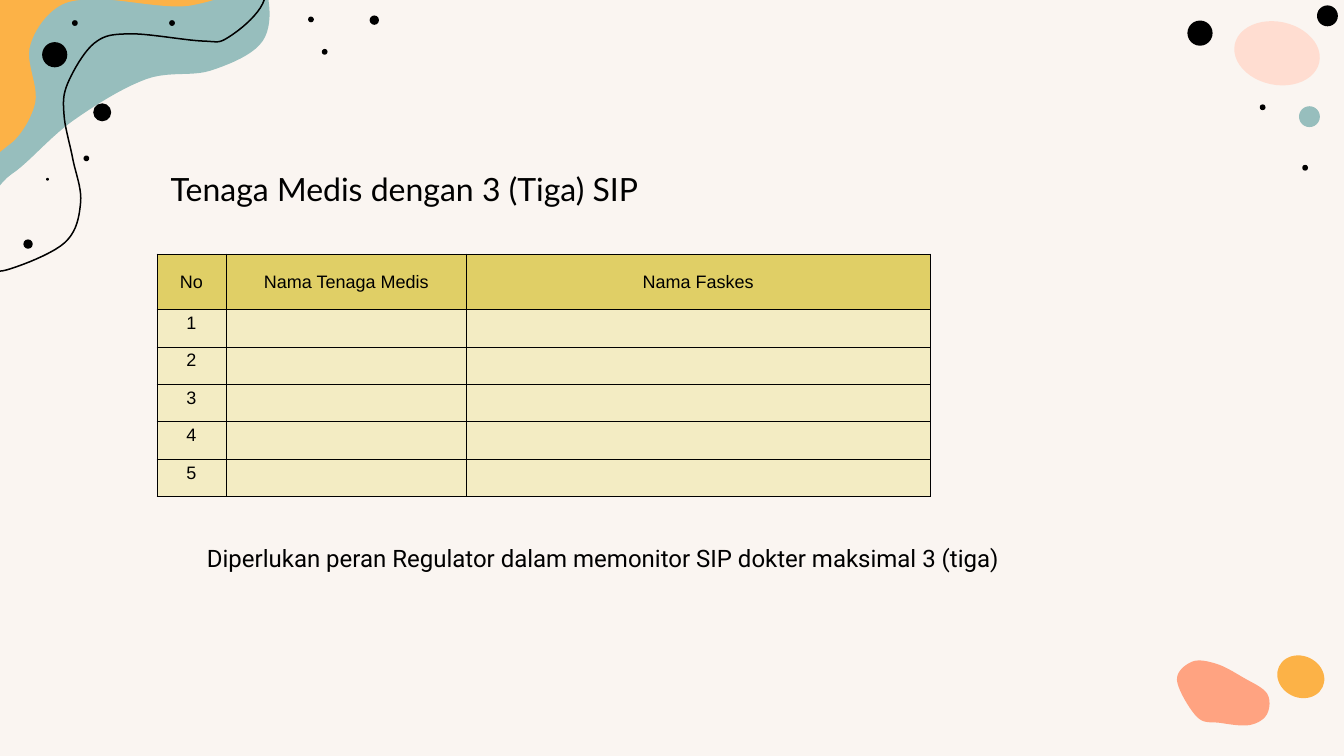
from dataclasses import dataclass

import lxml.etree
import pptx
import pptx.dml.color
import pptx.enum.shapes
import pptx.enum.text
import pptx.oxml.ns
import pptx.util

Inches = pptx.util.Inches
ALIGN = pptx.enum.text.PP_ALIGN
ANCHOR = pptx.enum.text.MSO_ANCHOR
COLORS = {
    "cream": "FAF5F1", "black": "000000", "teal": "97BEBD", "orange": "FCB247",
    "salmon": "FFA381", "pink": "FFDDD1", "head": "E0CF66", "row": "F3ECC3",
}
STEPS = 10  # points between two knots


@dataclass
class Blob:
    """Smooth outline through a few knots."""
    color: str
    knots: list[tuple[float, float]]
    closed: bool = True


@dataclass
class Dot:
    x: float
    y: float
    width: float
    color: str = "black"
    ratio: float = 1
    turn: float = 0


BLOBS = [
    Blob("teal", [(3.3, -0.8), (3.7, -0.15), (3.65, 0.57), (2.93, 0.98), (2.03, 1.1),
                  (1.01, 1.68), (0.16, 2.42), (-0.33, 2.54), (-0.33, -0.8)]),
    Blob("black", [(3.74, -0.64), (3.65, 0.05), (3.17, 0.52), (2.81, 0.57), (1.81, 0.47),
                   (1.31, 0.6), (0.94, 1.16), (0.89, 1.6), (1.01, 2.2), (1.12, 2.81),
                   (0.9, 3.37), (0.09, 3.75), (-0.26, 3.7)], closed=False),
    Blob("orange", [(3.33, -0.31), (2.63, 0.08), (1.36, -0.01), (0.77, 0.12), (0.41, 0.67),
                    (0.49, 1.42), (0.14, 2), (-0.3, 1.98), (-0.3, -0.31)]),
    Blob("salmon", [(16.63, 9.96), (16.95, 10.04), (17.36, 10.07), (17.6, 9.92), (17.6, 9.63),
                    (17.27, 9.41), (16.9, 9.22), (16.56, 9.19), (16.35, 9.45)]),
]
SPECKS = [(4.51, 0.72), (1.04, 0.32), (2.39, 0.32), (4.32, 0.27), (1.2, 2.2),
          (18.13, 2.33), (17.54, 1.49)]
DOTS = [Dot(x, y, 0.08) for x, y in SPECKS] + [
    Dot(0.76, 0.76, 0.35), Dot(16.67, 0.46, 0.35), Dot(1.42, 1.56, 0.25),
    Dot(5.2, 0.28, 0.13), Dot(0.39, 3.39, 0.13), Dot(0.66, 2.49, 0.04),
    Dot(18.44, 0.22, 0.29), Dot(18.19, 1.62, 0.29, "teal"),
    Dot(17.74, 0.74, 1.2, "pink", ratio=0.73, turn=12),
    Dot(18.07, 9.4, 0.67, "orange", ratio=0.86, turn=25),
]
HEADS = ("No", "Nama Tenaga Medis", "Nama Faskes")
ROWS = [HEADS] + [(str(n), "", "") for n in range(1, 6)]
WIDTHS = [0.96, 3.34, 6.44]
HEIGHTS = [0.77] + [0.52] * 5


def tint(name: str) -> pptx.dml.color.RGBColor:
    return pptx.dml.color.RGBColor.from_string(COLORS[name])


def paint(fill, name: str) -> None:
    fill.solid()
    fill.fore_color.rgb = tint(name)


def blend(a: float, b: float, c: float, d: float, t: float) -> float:
    """Catmull-Rom value between b and c."""
    return b + t / 2 * (c - a + t * (2 * a - 5 * b + 4 * c - d + t * (3 * (b - c) + d - a)))


def trace(blob: Blob) -> list[tuple[int, int]]:
    """Turn the knots of a blob into points along its outline."""
    knots = blob.knots
    if blob.closed:
        chain = [knots[-1], *knots, *knots[:2]]
    else:
        chain = [knots[0], *knots, knots[-1]]
    points = []
    for quad in zip(chain, chain[1:], chain[2:], chain[3:]):
        for i in range(1, STEPS + 1):
            x, y = (blend(*axis, i / STEPS) for axis in zip(*quad))
            points.append((Inches(x), Inches(y)))
    return points


def draw_blob(shapes, blob: Blob) -> None:
    pen = shapes.build_freeform(*map(Inches, blob.knots[0]))
    pen.add_line_segments(trace(blob), close=blob.closed)
    shape = pen.convert_to_shape()
    shape.shadow.inherit = False
    if blob.closed:
        paint(shape.fill, blob.color)
        shape.line.fill.background()
    else:
        shape.fill.background()
        paint(shape.line.fill, blob.color)
        shape.line.width = pptx.util.Pt(1.5)


def draw_dot(shapes, dot: Dot) -> None:
    height = dot.width * dot.ratio
    shape = shapes.add_shape(
        pptx.enum.shapes.MSO_SHAPE.OVAL, Inches(dot.x - dot.width / 2),
        Inches(dot.y - height / 2), Inches(dot.width), Inches(height))
    shape.rotation = dot.turn
    shape.shadow.inherit = False
    paint(shape.fill, dot.color)
    shape.line.fill.background()


def write(frame, text: str, *, font: str, size: int, align=ALIGN.CENTER) -> None:
    line = frame.paragraphs[0]
    line.alignment = align
    line.space_before = pptx.util.Pt(0)
    run = line.add_run()
    run.text = text
    run.font.name, run.font.size = font, pptx.util.Pt(size)
    run.font.color.rgb = tint("black")


def place(holder, box: tuple[float, ...], anchor) -> None:
    holder.left, holder.top, holder.width, holder.height = map(Inches, box)
    frame = holder.text_frame
    frame.auto_size = pptx.enum.text.MSO_AUTO_SIZE.NONE
    frame.vertical_anchor = anchor
    frame.margin_left = frame.margin_right = Inches(0.19)
    frame.margin_top = frame.margin_bottom = Inches(0.19)


def edge(cell) -> None:
    """Give a cell a thin black border on all sides."""
    props = cell._tc.get_or_add_tcPr()
    name = pptx.oxml.ns.qn
    for side in ("a:lnL", "a:lnR", "a:lnT", "a:lnB"):
        line = lxml.etree.SubElement(props, name(side), w=str(int(pptx.util.Pt(1))))
        fill = lxml.etree.SubElement(line, name("a:solidFill"))
        lxml.etree.SubElement(fill, name("a:srgbClr"), val=COLORS["black"])


def draw_table(shapes) -> None:
    table = shapes.add_table(len(ROWS), len(WIDTHS), Inches(2.18), Inches(3.53),
                             Inches(sum(WIDTHS)), Inches(sum(HEIGHTS))).table
    table.first_row = table.horz_banding = False
    for column, width in zip(table.columns, WIDTHS):
        column.width = Inches(width)
    for r, texts in enumerate(ROWS):
        table.rows[r].height = Inches(HEIGHTS[r])
        for c, text in enumerate(texts):
            cell = table.cell(r, c)
            edge(cell)
            paint(cell.fill, "row" if r else "head")
            cell.vertical_anchor = ANCHOR.TOP if r else ANCHOR.MIDDLE
            if text:
                write(cell.text_frame, text, font="Arial", size=18)


def main() -> None:
    deck = pptx.Presentation()
    deck.slide_width, deck.slide_height = Inches(18.67), Inches(10.5)
    slide = deck.slides.add_slide(deck.slide_layouts[0])
    paint(slide.background.fill, "cream")
    title, note = slide.placeholders
    for blob in BLOBS:
        draw_blob(slide.shapes, blob)
    for dot in DOTS:
        draw_dot(slide.shapes, dot)
    place(title, (2.18, 2.16, 9.29, 1.17), ANCHOR.TOP)
    write(title.text_frame, "Tenaga Medis dengan 3 (Tiga) SIP",
          font="Lato", size=32, align=ALIGN.LEFT)
    place(note, (2.18, 7.37, 12.39, 0.77), ANCHOR.MIDDLE)
    write(note.text_frame,
          "Diperlukan peran Regulator dalam memonitor SIP dokter maksimal 3 (tiga)",
          font="Roboto", size=24)
    draw_table(slide.shapes)
    deck.save("out.pptx")


if __name__ == "__main__":
    main()
